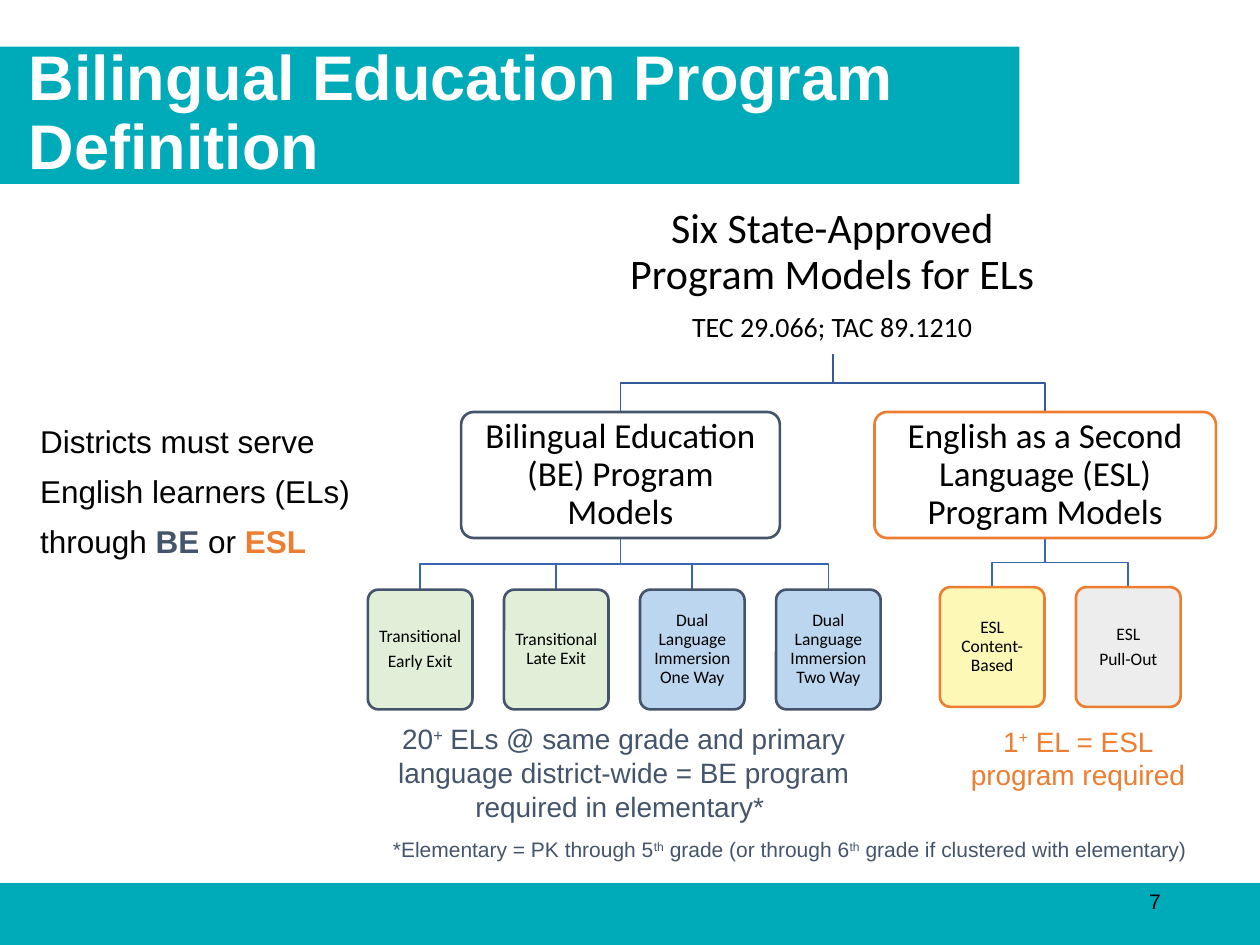
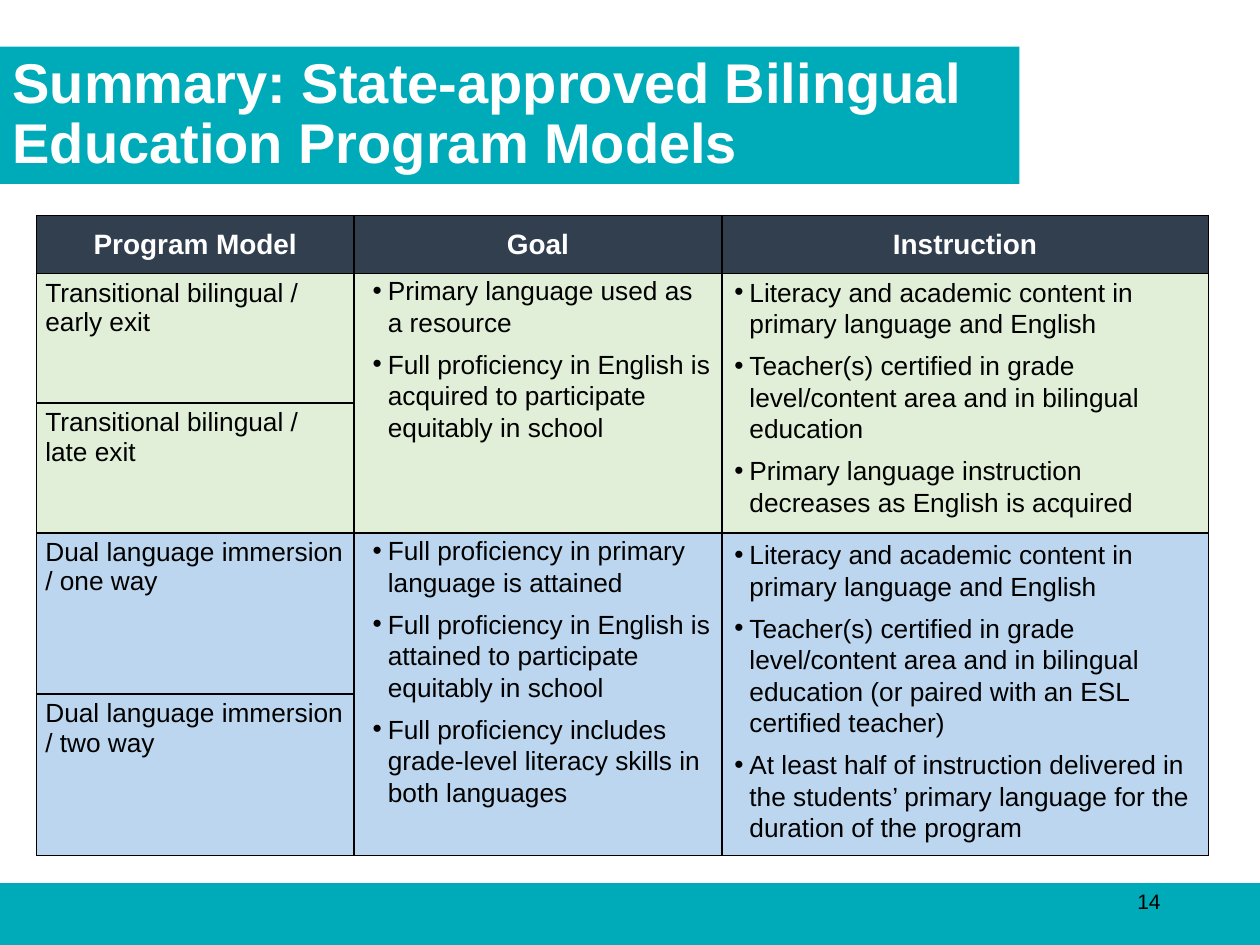
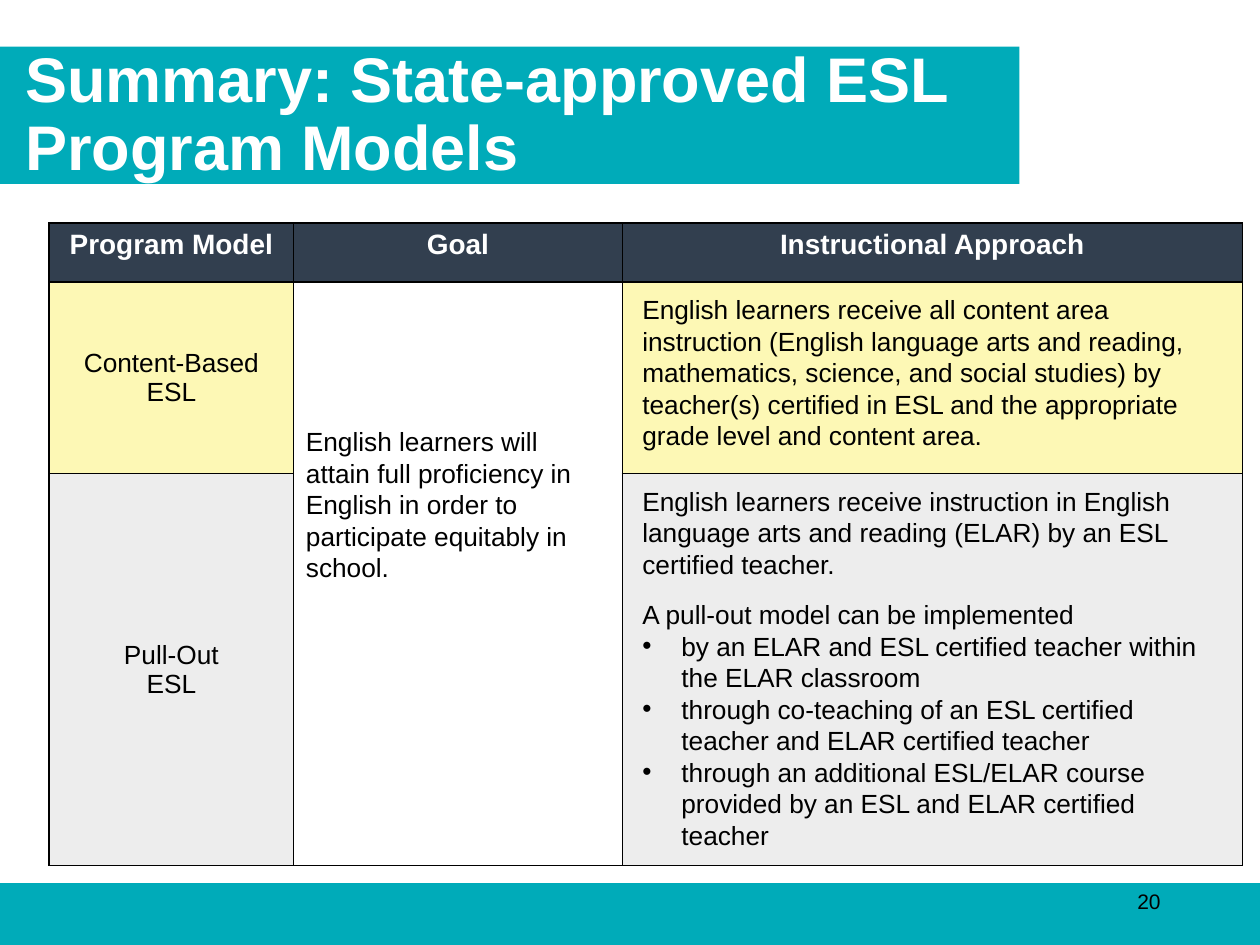
from lxml import etree
from pptx import Presentation
from pptx.dml.color import RGBColor
from pptx.enum.shapes import MSO_SHAPE
from pptx.enum.text import MSO_ANCHOR, MSO_AUTO_SIZE, PP_ALIGN
from pptx.oxml.ns import qn
from pptx.util import Inches, Pt

COLORS = {name: RGBColor.from_string(value) for name, value in {
    "teal": "00ABB9", "white": "FFFFFF", "black": "000000", "slate": "44546A",
    "orange": "ED7D31", "header": "323F4F", "green": "E1EFD8", "blue": "BBD6EE",
    "yellow": "FDF8B5", "gray": "EDEDED", "trunk": "345A99", "twig": "3A66B1",
}.items()}


def write(frame, paragraphs, size, color="black", font="Arial", bold=False,
          align=PP_ALIGN.LEFT, line=None, gap=0, indent=0):
    """Fill a frame; text between ^ marks is superscript, an indent adds bullets."""
    frame.word_wrap = True
    for i, text in enumerate(paragraphs):
        paragraph = frame.add_paragraph() if i else frame.paragraphs[0]
        if indent:
            properties = paragraph._p.get_or_add_pPr()
            properties.set("marL", str(Inches(indent)))
            properties.set("indent", str(-Inches(indent)))
            etree.SubElement(properties, qn("a:buFont")).set("typeface", "Arial")
            etree.SubElement(properties, qn("a:buChar")).set("char", "•")
        paragraph.alignment = align
        if line:
            paragraph.line_spacing = line
        if i and gap:
            paragraph.space_before = Pt(gap)
        for j, piece in enumerate(text.split("^")):
            run = paragraph.add_run()
            run.text = piece
            run.font.size, run.font.name, run.font.bold = Pt(size), font, bold
            run.font.color.rgb = COLORS[color]
            if j % 2:
                run.font._element.set("baseline", "30000")


def add_grid(slide, left, top, widths, heights, rows, fills, merges, margins, header_anchor, body):
    """Add a bordered table; body holds the anchor and alignment below the header."""
    table = slide.shapes.add_table(
        len(heights), len(widths), Inches(left), Inches(top),
        Inches(sum(widths)), Inches(sum(heights))).table
    table.first_row = table.horz_banding = False
    for column, width in zip(table.columns, widths):
        column.width = Inches(width)
    for r, height in enumerate(heights):
        table.rows[r].height = Inches(height)
        for c in range(len(widths)):
            cell = table.cell(r, c)
            cell.margin_left = cell.margin_right = Inches(margins[0])
            cell.margin_top = cell.margin_bottom = Inches(margins[1])
            cell.vertical_anchor = body[0] if r else header_anchor
            for side in ("L", "R", "T", "B"):
                border = etree.SubElement(cell._tc.get_or_add_tcPr(), qn(f"a:ln{side}"), w=str(Pt(1)))
                ink = etree.SubElement(border, qn("a:solidFill"))
                etree.SubElement(ink, qn("a:srgbClr"), val=str(COLORS["black"]))
            cell.fill.solid()
            cell.fill.fore_color.rgb = COLORS[fills[r][c]]
            if r == 0:
                write(cell.text_frame, [rows[0][c]], 16, "white", bold=True, align=PP_ALIGN.CENTER)
            elif c == 0:
                write(cell.text_frame, rows[r], 15, align=body[1])
    for first, last, column in merges:
        table.cell(first, column).merge(table.cell(last, column))


prs = Presentation()
prs.slide_width, prs.slide_height = Inches(10), Inches(7.5)
title_only = prs.slide_layouts[5]

# Titles, page numbers and the bands shared through the layout
slides = []
for title, place, size, page in [
    ("Bilingual Education Program \vDefinition", (0.13, 0.37, 8.63, 1.08), 36, 7),
    ("Summary: State-approved Bilingual Education Program Models", (0, 0.29, 9.11, 1.25), 32, 14),
    ("Summary: State-approved ESL \vProgram Models", (0.1, 0.43, 9.34, 0.98), 36, 20),
]:
    slide = prs.slides.add_slide(title_only)
    slides.append(slide)
    heading = slide.shapes.title
    heading.left, heading.top, heading.width, heading.height = map(Inches, place)
    frame = heading.text_frame
    frame.text = title
    frame.auto_size = MSO_AUTO_SIZE.NONE
    frame.vertical_anchor = MSO_ANCHOR.MIDDLE
    frame.paragraphs[0].alignment = PP_ALIGN.LEFT
    frame.paragraphs[0].line_spacing = 0.9
    for run in frame.paragraphs[0].runs:
        run.font.size, run.font.name, run.font.bold = Pt(size), "Arial", True
        run.font.color.rgb = COLORS["white"]
    number = slide.shapes.add_textbox(*map(Inches, (7.06, 6.95, 2.25, 0.4))).text_frame
    number.vertical_anchor = MSO_ANCHOR.MIDDLE
    write(number, [str(page)], 12, align=PP_ALIGN.RIGHT)

models, bilingual, esl = slides

for place in [(-0.01, 0.37, 8.1, 1.09), (0, 7.01, 10, 0.49)]:
    band = models.shapes.add_shape(MSO_SHAPE.RECTANGLE, *map(Inches, place))
    band.shadow.inherit = False
    band.fill.solid()
    band.fill.fore_color.rgb = COLORS["teal"]
    band.line.fill.background()
    title_only.shapes._spTree.insert(2, band._element)

# Program model tree
ROOT_X, ROOT_BOTTOM = 6.61, 2.81
BRANCH_TOP, BRANCH_HEIGHT = 3.27, 1
LEAF_WIDTH, LEAF_HEIGHT, LEAF_PITCH = 0.83, 0.95, 1.08

root = models.shapes.add_textbox(*map(Inches, (4.75, 1.75, 3.71, 0.87))).text_frame
root.vertical_anchor = MSO_ANCHOR.MIDDLE
write(root, ["Six State-Approved Program Models for ELs", "TEC 29.066; TAC 89.1210"],
      24, font="Calibri", align=PP_ALIGN.CENTER, line=0.9, gap=8.4)
root.paragraphs[1].runs[0].font.size = Pt(16)

nodes, elbows = [], []
for text, left, width, outline, leaf_left, leaf_top, leaves in [
    ("Bilingual Education (BE) Program Models", 3.66, 2.53, "slate", 2.92, 4.68, [
        (["Transitional", "Early Exit"], "green"),
        (["Transitional Late Exit"], "green"),
        (["Dual Language Immersion One Way"], "blue"),
        (["Dual Language Immersion Two Way"], "blue")]),
    ("English as a Second Language (ESL) Program Models", 6.94, 2.71, "orange", 7.46, 4.66, [
        (["ESL Content-Based"], "yellow"),
        (["ESL", "Pull-Out"], "gray")]),
]:
    center = left + width / 2
    nodes.append(([text], (left, BRANCH_TOP, width, BRANCH_HEIGHT), "white", outline, 20, 0.11))
    elbows.append((ROOT_X, ROOT_BOTTOM, center, BRANCH_TOP, "trunk"))
    for i, (lines, fill) in enumerate(leaves):
        x = leaf_left + i * LEAF_PITCH
        nodes.append((lines, (x, leaf_top, LEAF_WIDTH, LEAF_HEIGHT), fill, outline, 10, 0.06))
        elbows.append((center, BRANCH_TOP + BRANCH_HEIGHT, x + LEAF_WIDTH / 2, leaf_top, "twig"))

for x1, y1, x2, y2, color in elbows:
    middle = (y1 + y2) / 2
    builder = models.shapes.build_freeform(Inches(x1), Inches(y1))
    builder.add_line_segments(
        [(Inches(x), Inches(y)) for x, y in [(x1, middle), (x2, middle), (x2, y2)]], close=False)
    elbow = builder.convert_to_shape()
    elbow.shadow.inherit = False
    elbow.fill.background()
    elbow.line.color.rgb = COLORS[color]
    elbow.line.width = Pt(1)

for lines, place, fill, outline, size, inset in nodes:
    node = models.shapes.add_shape(MSO_SHAPE.ROUNDED_RECTANGLE, *map(Inches, place))
    node.adjustments[0] = 0.1
    node.shadow.inherit = False
    node.fill.solid()
    node.fill.fore_color.rgb = COLORS[fill]
    node.line.color.rgb = COLORS[outline]
    node.line.width = Pt(1.5)
    frame = node.text_frame
    frame.vertical_anchor = MSO_ANCHOR.MIDDLE
    frame.margin_left = frame.margin_right = frame.margin_top = frame.margin_bottom = Inches(inset)
    write(frame, lines, size, font="Calibri", align=PP_ALIGN.CENTER, line=0.9, gap=3.5)

for text, place, size, color, align in [
    ("*Elementary = PK through 5^th^ grade (or through 6^th^ grade if clustered with elementary)",
     (3.02, 6.59, 6.62, 0.3), 12, "slate", PP_ALIGN.LEFT),
    ("20^+^ ELs @ same grade and primary language district-wide = BE program required in elementary* ",
     (3.02, 5.68, 3.86, 0.91), 16, "slate", PP_ALIGN.CENTER),
    ("1^+^ EL = ESL program required", (7.59, 5.7, 1.93, 0.64), 16, "orange", PP_ALIGN.CENTER),
]:
    write(models.shapes.add_textbox(*map(Inches, place)).text_frame, [text], size, color, align=align)

duty = models.shapes.add_textbox(*map(Inches, (0.22, 3.2, 2.8, 1.11))).text_frame
duty.word_wrap = True
duty.paragraphs[0].line_spacing = 1.33
for text, color, bold in [
    ("Districts must serve English learners (ELs) through ", "black", False),
    ("BE ", "slate", True), ("or ", "black", False), ("ESL", "orange", True),
]:
    run = duty.paragraphs[0].add_run()
    run.text = text
    run.font.size, run.font.name, run.font.bold = Pt(18), "Arial", bold
    run.font.color.rgb = COLORS[color]

# Bilingual education summary
add_grid(
    bilingual, 0.29, 1.71, [2.52, 2.92, 3.86], [0.46, 1.03, 1.03, 1.28, 1.28],
    [["Program Model", "Goal", "Instruction"],
     ["Transitional bilingual /", "early exit"],
     ["Transitional bilingual /", "late exit"],
     ["Dual language immersion / one way"],
     ["Dual language immersion / two way"]],
    [[fill] * 3 for fill in ("header", "green", "green", "blue", "blue")],
    [(1, 2, 1), (1, 2, 2), (3, 4, 1), (3, 4, 2)],
    (0.07, 0.04), MSO_ANCHOR.MIDDLE, (MSO_ANCHOR.TOP, PP_ALIGN.LEFT))

for place, bullets, dual_start, dual_gap in [
    ((2.86, 2.13, 2.91, 4.78), [
        "Primary language used as a resource",
        "Full proficiency in English is acquired to participate equitably in school",
        "Full proficiency in primary language is attained",
        "Full proficiency in English is attained to participate equitably in school",
        "Full proficiency includes grade-level literacy skills in both languages"], 2, 52.5),
    ((5.73, 2.14, 3.83, 4.64), [
        "Literacy and academic content in primary language and English",
        "Teacher(s) certified in grade level/content area and in bilingual education",
        "Primary language instruction decreases as English is acquired",
        "Literacy and academic content in primary language and English",
        "Teacher(s) certified in grade level/content area and in bilingual education "
        "(or paired with an ESL certified teacher)",
        "At least half of instruction delivered in the students’ primary language "
        "for the duration of the program"], 3, 12),
]:
    frame = bilingual.shapes.add_textbox(*map(Inches, place)).text_frame
    write(frame, bullets, 15, gap=6, indent=0.12)
    frame.paragraphs[dual_start].space_before = Pt(dual_gap)

# ESL summary
add_grid(
    esl, 0.39, 1.77, [1.94, 2.61, 4.92], [0.47, 1.52, 3.11],
    [["Program Model", "Goal", "Instructional Approach"], ["Content-Based ESL"], ["Pull-Out", "ESL"]],
    [["header"] * 3, ["yellow", "white", "yellow"], ["gray", "white", "gray"]],
    [(1, 2, 1)], (0.1, 0.05), MSO_ANCHOR.TOP, (MSO_ANCHOR.MIDDLE, PP_ALIGN.CENTER))

for place, text in [
    ((2.33, 3.33, 2.46, 1.36),
     "English learners will attain full proficiency in English in order to participate "
     "equitably in school."),
    ((5, 2.28, 4.84, 1.36),
     "English learners receive all content area instruction (English language arts and reading, "
     "mathematics, science, and social studies) by teacher(s) certified in ESL and the "
     "appropriate grade level and content area."),
    ((5, 3.8, 4.8, 0.86),
     "English learners receive instruction in English language arts and reading (ELAR) "
     "by an ESL certified teacher."),
]:
    write(esl.shapes.add_textbox(*map(Inches, place)).text_frame, [text], 15)

pull_out = esl.shapes.add_textbox(*map(Inches, (5, 4.7, 4.84, 2.12))).text_frame
write(pull_out, ["A pull-out model can be implemented"], 15)
options = [
    "by an ELAR and ESL certified teacher within the ELAR classroom",
    "through co-teaching of an ESL certified teacher and ELAR certified teacher",
    "through an additional ESL/ELAR course provided by an ESL and ELAR certified teacher",
]
for option in options:
    paragraph = pull_out.add_paragraph()
    properties = paragraph._p.get_or_add_pPr()
    properties.set("marL", str(Inches(0.31)))
    properties.set("indent", str(-Inches(0.31)))
    etree.SubElement(properties, qn("a:buFont")).set("typeface", "Arial")
    etree.SubElement(properties, qn("a:buChar")).set("char", "•")
    run = paragraph.add_run()
    run.text = option
    run.font.size, run.font.name = Pt(15), "Arial"
    run.font.color.rgb = COLORS["black"]

prs.save("out.pptx")
